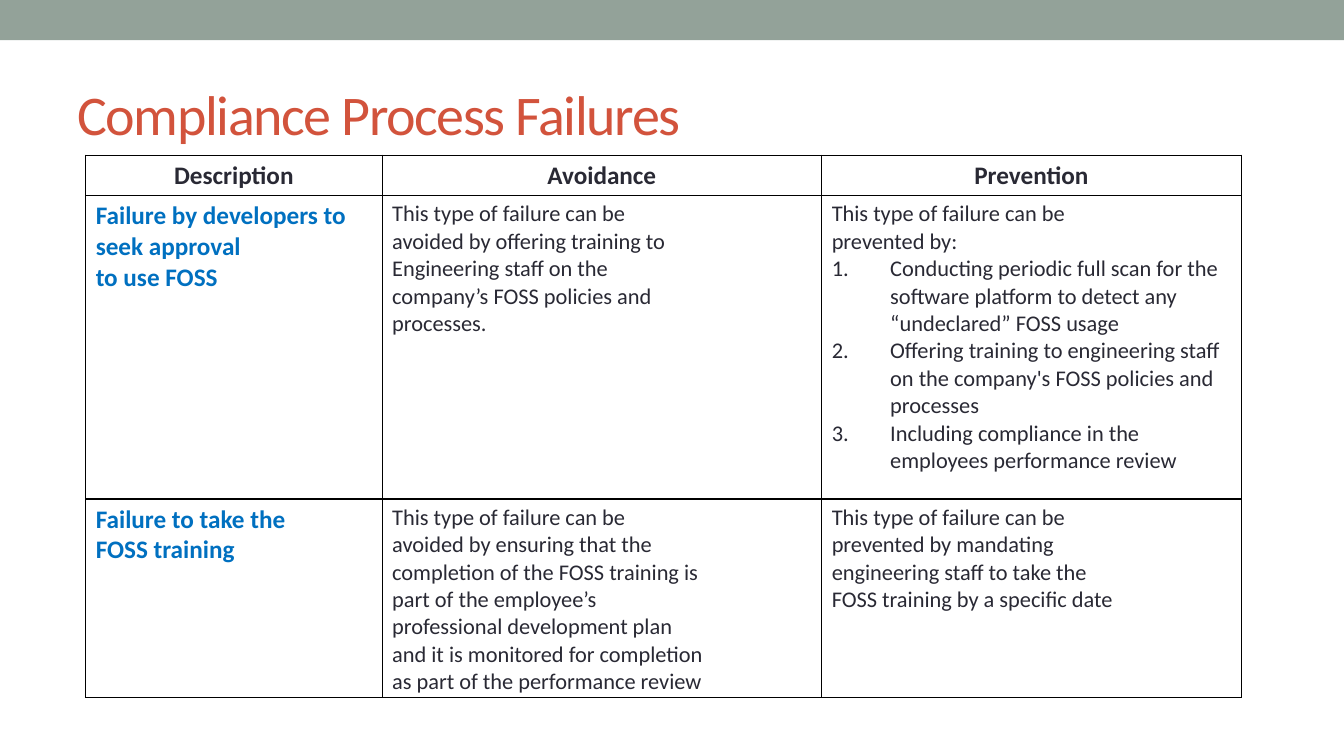
"""Build the slide on failures of the compliance process."""
from dataclasses import dataclass

from pptx import Presentation
from pptx.dml.color import RGBColor as Rgb
from pptx.enum.shapes import MSO_SHAPE as Shape
from pptx.enum.text import MSO_ANCHOR as Anchor, PP_ALIGN as Align
from pptx.oxml.ns import qn
from pptx.slide import Slide
from pptx.table import _Cell as Cell
from pptx.text.text import TextFrame as Frame
from pptx.util import Inches, Pt
from lxml.etree import SubElement as Sub

WIDE, HIGH = 13.33, 7.5


@dataclass(frozen=True)
class Theme:
    """Colours, font and type sizes."""
    font: str = "Calibri"
    bar: str = "93A299"
    title: str = "D2533C"
    text: str = "292934"
    accent: str = "0070C0"
    rule: str = "000000"
    big: int = 40
    mid: int = 18
    small: int = 16


THEME = Theme()


@dataclass(frozen=True)
class Style:
    """Look of the text in a column or row."""
    size: int
    color: str
    bold: bool = False
    align: Align = Align.LEFT


@dataclass(frozen=True)
class Entry:
    """Lines of one cell, then its numbered steps."""
    lines: tuple[str, ...]
    steps: tuple[str, ...] = ()


@dataclass(frozen=True)
class Box:
    """Place and size as shares of the slide."""
    left: float
    top: float
    width: float
    height: float

    def spots(self) -> tuple[int, ...]:
        """Give left, top, width and height as lengths."""
        return (Inches(self.left * WIDE), Inches(self.top * HIGH),
                Inches(self.width * WIDE), Inches(self.height * HIGH))


HEAD = Style(THEME.mid, THEME.text, True, Align.CENTER)
LABEL = Style(THEME.mid, THEME.accent, True)
BODY = Style(THEME.small, THEME.text)
TITLE = Style(THEME.big, THEME.title)

BAR = Box(0, 0, 1, 0.4 / HIGH)
NAME = Box(0.67 / WIDE, 0.58 / HIGH, 12 / WIDE, 1.08 / HIGH)
COLS = (2.94, 4.36, 4.16)
ROWS = (0.4, 3.01, 1.95)
GRID = Box(0.85 / WIDE, 1.54 / HIGH, sum(COLS) / WIDE, sum(ROWS) / HIGH)
HANG = Inches(0.58)

CELLS = (
    (Entry(("Description",)), Entry(("Avoidance",)), Entry(("Prevention",))),
    (
        Entry(("Failure by developers to seek approval", "to use FOSS")),
        Entry(("This type of failure can be",
               "avoided by offering training to",
               "Engineering staff on the",
               "company’s FOSS policies and",
               "processes.")),
        Entry(("This type of failure can be", "prevented by:"),
              ("Conducting periodic full scan for the software platform "
               "to detect any “undeclared” FOSS usage",
               "Offering training to engineering staff on the company's "
               "FOSS policies and processes",
               "Including compliance in the employees performance review")),
    ),
    (
        Entry(("Failure to take the", "FOSS training")),
        Entry(("This type of failure can be",
               "avoided by ensuring that the",
               "completion of the FOSS training is",
               "part of the employee’s",
               "professional development plan",
               "and it is monitored for completion",
               "as part of the performance review")),
        Entry(("This type of failure can be",
               "prevented by mandating",
               "engineering staff to take the",
               "FOSS training by a specific date")),
    ),
)


def write(frame: Frame, entry: Entry, style: Style) -> None:
    """Fill a frame with lines and numbered steps."""
    for at, words in enumerate(entry.lines + entry.steps):
        para = frame.add_paragraph() if at else frame.paragraphs[0]
        para.alignment = style.align
        run = para.add_run()
        run.text = words
        font = run.font
        font.name, font.size, font.bold = THEME.font, Pt(style.size), style.bold
        font.color.rgb = Rgb.from_string(style.color)
        if at >= len(entry.lines):
            props = para._p.get_or_add_pPr()
            props.set("marL", str(HANG))
            props.set("indent", str(-HANG))
            Sub(props, qn("a:buAutoNum"), type="arabicPeriod")


def border(cell: Cell) -> None:
    """Rule all four sides of a cell and clear its fill."""
    props = cell._tc.get_or_add_tcPr()
    for side in "LRTB":
        line = Sub(props, qn(f"a:ln{side}"), w=str(Pt(1)))
        Sub(Sub(line, qn("a:solidFill")), qn("a:srgbClr"), val=THEME.rule)
    cell.fill.background()


def draw_bar(slide: Slide) -> None:
    """Draw the band along the top edge."""
    bar = slide.shapes.add_shape(Shape.RECTANGLE, *BAR.spots())
    bar.shadow.inherit = False
    bar.fill.solid()
    bar.fill.fore_color.rgb = Rgb.from_string(THEME.bar)
    bar.line.fill.background()


def draw_title(slide: Slide) -> None:
    """Set the heading with slightly tight letters."""
    frame = slide.shapes.add_textbox(*NAME.spots()).text_frame
    frame.word_wrap = True
    frame.vertical_anchor = Anchor.MIDDLE
    write(frame, Entry(("Compliance Process Failures",)), TITLE)
    frame.paragraphs[0].runs[0].font._element.set("spc", "-100")


def draw_grid(slide: Slide) -> None:
    """Draw the table of failures."""
    table = slide.shapes.add_table(len(ROWS), len(COLS), *GRID.spots()).table
    table.first_row = table.horz_banding = False
    for col, width in zip(table.columns, COLS):
        col.width = Inches(width)
    for row, height in zip(table.rows, ROWS):
        row.height = Inches(height)
    for y, row in enumerate(CELLS):
        for x, entry in enumerate(row):
            cell = table.cell(y, x)
            border(cell)
            write(cell.text_frame, entry,
                  HEAD if y == 0 else LABEL if x == 0 else BODY)


def main() -> None:
    """Build and save the deck."""
    deck = Presentation()
    deck.slide_width, deck.slide_height = Inches(WIDE), Inches(HIGH)
    slide = deck.slides.add_slide(deck.slide_layouts[6])
    draw_bar(slide)
    draw_title(slide)
    draw_grid(slide)
    deck.save("out.pptx")


if __name__ == "__main__":
    main()
